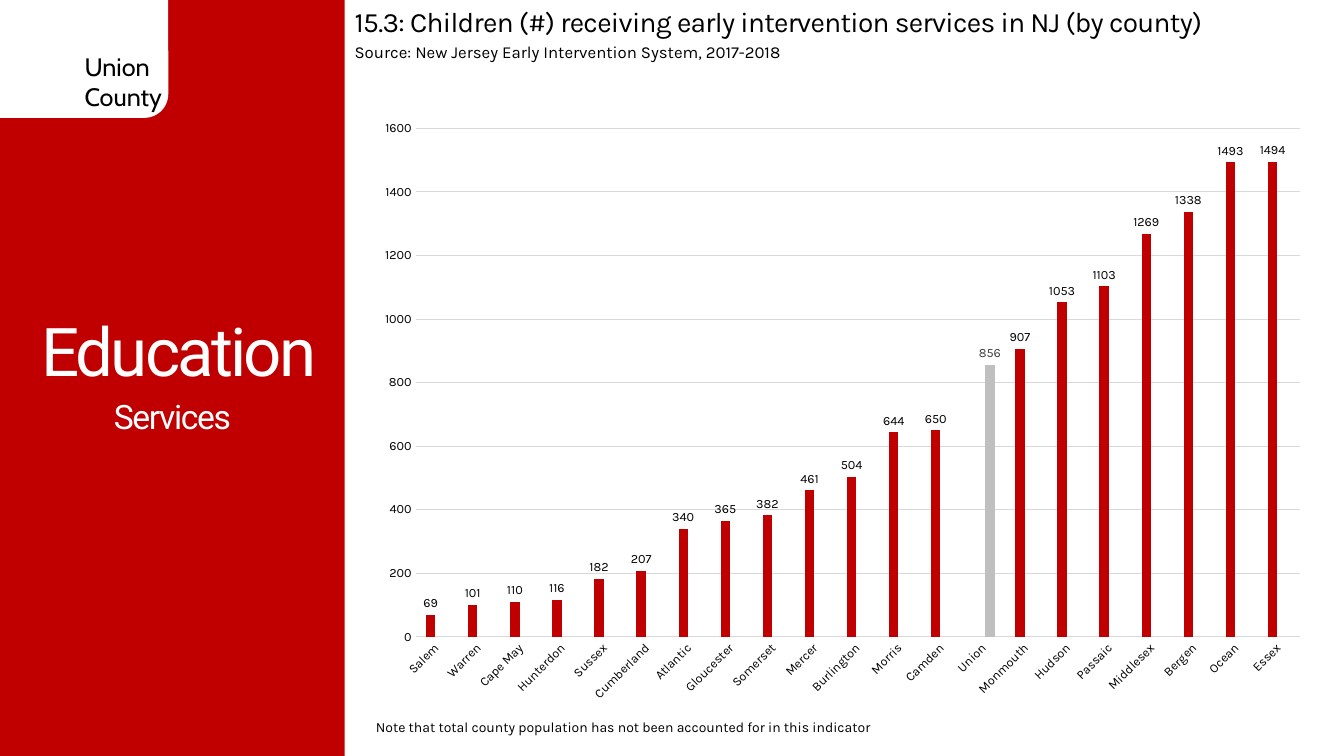
from lxml import etree
from pptx import Presentation
from pptx.chart.data import CategoryChartData
from pptx.dml.color import RGBColor
from pptx.enum.chart import XL_CHART_TYPE, XL_LABEL_POSITION, XL_TICK_MARK
from pptx.enum.shapes import MSO_SHAPE
from pptx.enum.text import MSO_ANCHOR, MSO_AUTO_SIZE, PP_ALIGN
from pptx.util import Inches, Pt

COLUMN_CHART = XL_CHART_TYPE.COLUMN_CLUSTERED
OUTSIDE_END = XL_LABEL_POSITION.OUTSIDE_END
NO_TICK = XL_TICK_MARK.NONE
RECTANGLE = MSO_SHAPE.RECTANGLE
ROUNDED = MSO_SHAPE.ROUNDED_RECTANGLE
MIDDLE, TOP = MSO_ANCHOR.MIDDLE, MSO_ANCHOR.TOP
GROW, FIXED = MSO_AUTO_SIZE.SHAPE_TO_FIT_TEXT, MSO_AUTO_SIZE.NONE
LEFT, CENTER = PP_ALIGN.LEFT, PP_ALIGN.CENTER

# The slide is a grid of 100 columns by 100 rows
WIDTH, HEIGHT = Inches(13.33), Inches(7.5)
PANEL = 25.65
CHART_LEFT = 27.23

COLORS = {"red": "C00000", "white": "FFFFFF", "black": "000000",
          "grid": "D9D9D9", "gray": "BFBFBF", "dark": "404040"}

COUNTIES = {
    "Salem": 69, "Warren": 101, "Cape May": 110, "Hunterdon": 116,
    "Sussex": 182, "Cumberland": 207, "Atlantic": 340, "Gloucester": 365,
    "Somerset": 382, "Mercer": 461, "Burlington": 504, "Morris": 644,
    "Camden": 650, "Union": 856, "Monmouth": 907, "Hudson": 1053,
    "Passaic": 1103, "Middlesex": 1269, "Bergen": 1338, "Ocean": 1493,
    "Essex": 1494,
}
FEATURED = "Union"


def color(name):
    return RGBColor.from_string(COLORS[name])


def place(left, top, width, height):
    return [round(share * side / 100) for share, side in
            zip((left, top, width, height), (WIDTH, HEIGHT, WIDTH, HEIGHT))]


def set_all(target, values):
    for name, value in values.items():
        setattr(target, name, value)


def set_font(font, name, size, ink):
    set_all(font, {"name": name, "size": Pt(size)})
    font.color.rgb = color(ink)


def add_panel(page, kind, area, fill):
    panel = page.shapes.add_shape(kind, *place(*area))
    panel.shadow.inherit = False
    panel.fill.solid()
    panel.fill.fore_color.rgb = color(fill)
    panel.line.fill.background()


def add_text(page, area, lines, font, size, ink="black", spacing=0,
             align=LEFT, line_spacing=None, anchor=TOP, fit=GROW):
    box = page.shapes.add_textbox(*place(*area))
    frame = box.text_frame
    set_all(frame, {"word_wrap": True, "auto_size": fit,
                    "vertical_anchor": anchor})
    frame.text = "\n".join(lines)
    for para in frame.paragraphs:
        set_all(para, {"alignment": align, "line_spacing": line_spacing})
        for span in para.runs:
            set_font(span.font, font, size, ink)
            if spacing:
                span.font._element.set("spc", str(round(spacing * 100)))


def style_series(series, fill, ink):
    series.format.fill.solid()
    series.format.fill.fore_color.rgb = color(fill)
    series.invert_if_negative = False
    labels = series.data_labels
    set_all(labels, {"show_value": True, "position": OUTSIDE_END})
    set_font(labels.font, "Karla", 9, ink)


def style_axis(axis):
    set_all(axis, {"major_tick_mark": NO_TICK, "minor_tick_mark": NO_TICK})
    set_font(axis.tick_labels.font, "Karla", 9, "black")


def style_line(line):
    line.color.rgb = color("grid")
    line.width = Pt(0.75)


def add_county_chart(page, area):
    data = CategoryChartData()
    data.categories = list(COUNTIES)
    data.add_series("Series 1", [None if county == FEATURED else count
                                 for county, count in COUNTIES.items()])
    data.add_series("Series 2", [count if county == FEATURED else None
                                 for county, count in COUNTIES.items()])
    chart = page.shapes.add_chart(COLUMN_CHART, *place(*area), data).chart
    set_all(chart, {"has_legend": False, "has_title": False})
    set_font(chart.font, "Calibri", 10, "black")

    # Bars
    plot = chart.plots[0]
    set_all(plot, {"gap_width": 219, "overlap": -27,
                   "vary_by_categories": False})
    for series, fill, ink in zip(plot.series, ("red", "gray"),
                                 ("black", "dark")):
        style_series(series, fill, ink)

    # Axes, with slanted county names
    names, counts = chart.category_axis, chart.value_axis
    for axis in (names, counts):
        style_axis(axis)
    style_line(names.format.line)
    slant = names._element.find(".//{*}txPr/{*}bodyPr")
    slant.set("rot", str(-45 * 60000))
    slant.set("vert", "horz")
    set_all(counts, {"minimum_scale": 0, "maximum_scale": 1600,
                     "major_unit": 200, "has_major_gridlines": True})
    counts.format.line.fill.background()
    style_line(counts.major_gridlines.format.line)


def main():
    deck = Presentation()
    set_all(deck, {"slide_width": WIDTH, "slide_height": HEIGHT})
    page = deck.slides.add_slide(deck.slide_layouts[6])

    # Side panel with the county tab
    add_panel(page, RECTANGLE, (0, 0, PANEL, 100), "red")
    add_panel(page, ROUNDED, (-2.48, -3.33, 15, 18.93), "white")
    add_text(page, (5.55, 6.13, 7.5, 9.47), ["Union", "County"], "Cabin", 18)
    add_text(page, (0, 10, 26.63, 73.73), ["Education"], "Roboto", 48,
             "white", -2, CENTER, 0.9, MIDDLE, FIXED)
    add_text(page, (0, 52.27, PANEL, 6.13), ["Services"], "Roboto", 24,
             "white", -1, CENTER, 0.9)

    # Heading, chart and note
    add_text(page, (PANEL, 0, 73.95, 5.87),
             ["15.3: Children (#) receiving early intervention services "
              "in NJ (by county)"], "Karla", 20, spacing=-0.5)
    add_text(page, (PANEL, 4.93, 68.93, 4),
             ["Source: New Jersey Early Intervention System, 2017-2018"],
             "Karla", 12)
    add_county_chart(page, (CHART_LEFT, 14.4, 70.88, 80))
    add_text(page, (CHART_LEFT, 94.4, 69.98, 3.6),
             ["Note that total county population has not been accounted "
              "for in this indicator"], "Karla", 10)

    deck.save("out.pptx")


if __name__ == "__main__":
    main()
